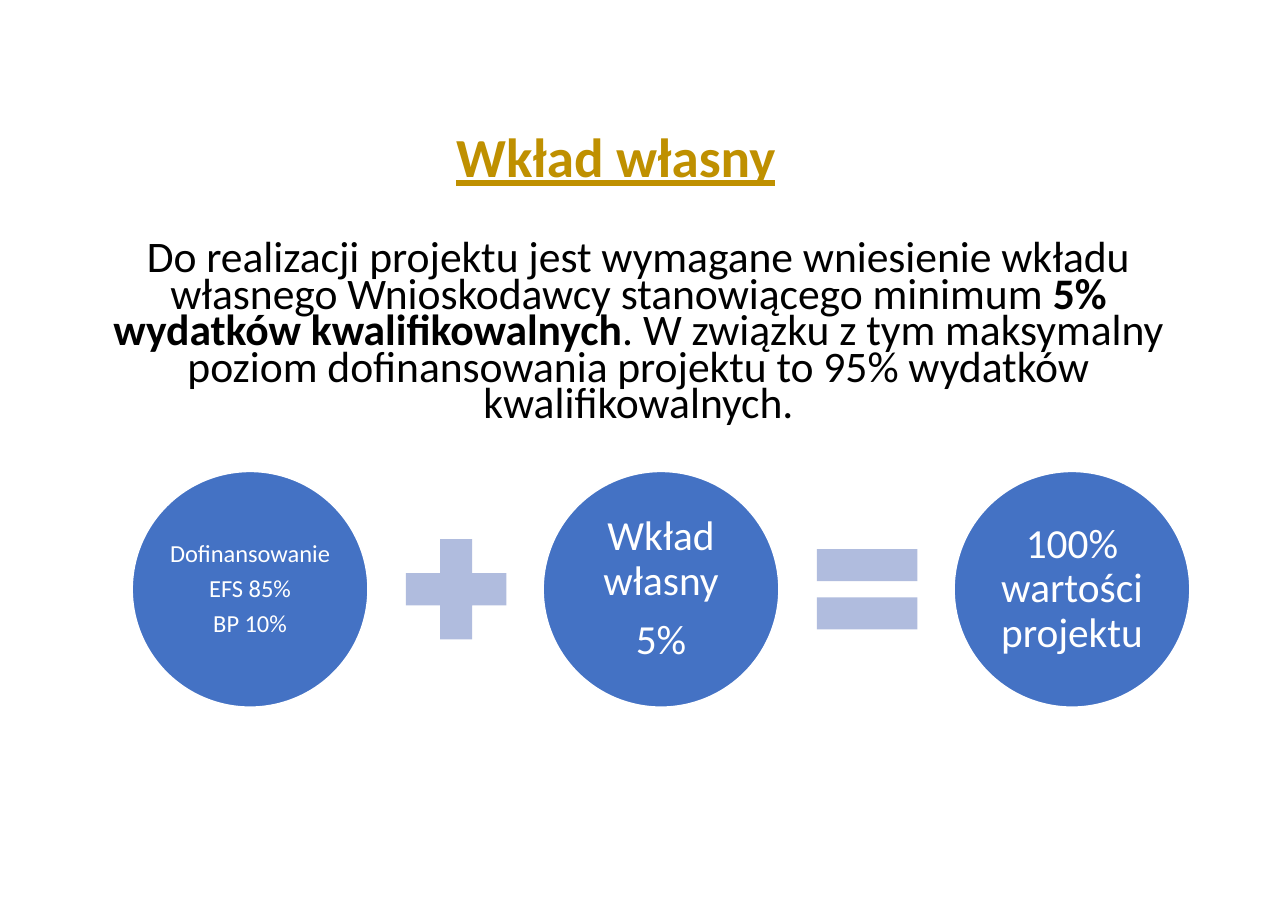
"""Build the slide on the applicant's own contribution to the project."""
from typing import NamedTuple

import pptx
import pptx.dml.color
import pptx.enum.shapes
import pptx.enum.text
import pptx.util

Inches = pptx.util.Inches
Pt = pptx.util.Pt
MSO_SHAPE = pptx.enum.shapes.MSO_SHAPE
PP_ALIGN = pptx.enum.text.PP_ALIGN
MSO_ANCHOR = pptx.enum.text.MSO_ANCHOR

CIRCLE_SIZE = 2.14
SIGN_SIZE = 1.24
FIRST_CIRCLE_LEFT = 1.2
CIRCLE_STEP = 3.73
SIGN_OFFSET = 2.32
ROW_MIDDLE = 5.35


class Share(NamedTuple):
    """One circle of the equation."""
    lines: tuple[str, ...]
    size: float
    inset: float


SHARES = (
    Share(("Dofinansowanie", "EFS 85%", "BP 10%"), 16, 0.02),
    Share(("Wkład własny", "5%"), 27, 0.04),
    Share(("100% wartości projektu",), 27, 0.04),
)
SIGNS = (MSO_SHAPE.MATH_PLUS, MSO_SHAPE.MATH_EQUAL)
REQUIREMENT = (
    ("Do realizacji projektu jest wymagane wniesienie wkładu własnego "
     "Wnioskodawcy stanowiącego minimum ", False),
    ("5% wydatków kwalifikowalnych", True),
    (". W związku z tym maksymalny poziom dofinansowania projektu to 95% "
     "wydatków kwalifikowalnych.", False),
)


def rgb(value: str) -> pptx.dml.color.RGBColor:
    """Turn a hex string into a colour."""
    return pptx.dml.color.RGBColor.from_string(value)


def apply(target, formats: dict) -> None:
    """Set each attribute of the target to its format value."""
    for name, value in formats.items():
        setattr(target, name, value)


def add_run(paragraph, text: str, size: float, color: str, **formats) -> None:
    """Append a formatted run to the paragraph."""
    run = paragraph.add_run()
    run.text = text
    apply(run.font, {"name": "Calibri", "size": Pt(size), **formats})
    run.font.color.rgb = rgb(color)


def add_figure(slide, kind, left: float, size: float, color: str):
    """Add a flat shape centred on the row of the equation."""
    figure = slide.shapes.add_shape(
        kind, Inches(left), Inches(ROW_MIDDLE - size / 2), Inches(size), Inches(size))
    figure.shadow.inherit = False
    figure.fill.solid()
    figure.fill.fore_color.rgb = rgb(color)
    figure.line.fill.background()
    return figure


def add_share(slide, share: Share, left: float) -> None:
    """Add a circle with its lines of text."""
    circle = add_figure(slide, MSO_SHAPE.OVAL, left, CIRCLE_SIZE, "4472C4")
    circle.line.color.rgb = rgb("FFFFFF")
    circle.line.width = Pt(1)
    frame = circle.text_frame
    inset = Inches(share.inset)
    apply(frame, {"word_wrap": True, "vertical_anchor": MSO_ANCHOR.MIDDLE,
                  "margin_left": inset, "margin_right": inset,
                  "margin_top": inset, "margin_bottom": inset})
    for index, line in enumerate(share.lines):
        paragraph = frame.add_paragraph() if index else frame.paragraphs[0]
        apply(paragraph, {"alignment": PP_ALIGN.CENTER, "line_spacing": 0.9,
                          "space_after": Pt(round(share.size * 0.35, 1))})
        add_run(paragraph, line, share.size, "FFFFFF")


def add_heading(slide) -> None:
    """Place and format the title placeholder."""
    heading = slide.shapes.title
    apply(heading, {"left": Inches(4.04), "top": Inches(1.06),
                    "width": Inches(4.09), "height": Inches(0.71)})
    apply(heading.text_frame, {"word_wrap": True, "vertical_anchor": MSO_ANCHOR.TOP,
                               "auto_size": pptx.enum.text.MSO_AUTO_SIZE.NONE})
    paragraph = heading.text_frame.paragraphs[0]
    paragraph.alignment = PP_ALIGN.LEFT
    add_run(paragraph, "Wkład własny", 36, "BF9000", bold=True, underline=True)


def add_requirement(slide) -> None:
    """Add the paragraph on the required contribution."""
    requirement = slide.shapes.add_textbox(
        Inches(0.65), Inches(2.16), Inches(10.29), Inches(1.9))
    requirement.text_frame.word_wrap = True
    paragraph = requirement.text_frame.paragraphs[0]
    apply(paragraph, {"alignment": PP_ALIGN.CENTER, "line_spacing": 0.7})
    for text, bold in REQUIREMENT:
        add_run(paragraph, text, 28.5, "000000", bold=bold)


def main() -> None:
    """Create and save the presentation."""
    presentation = pptx.Presentation()
    presentation.slide_width = Inches(11.69)
    presentation.slide_height = Inches(8.27)
    slide = presentation.slides.add_slide(presentation.slide_layouts[5])
    add_heading(slide)
    add_requirement(slide)
    for index, share in enumerate(SHARES):
        add_share(slide, share, FIRST_CIRCLE_LEFT + index * CIRCLE_STEP)
    for index, sign in enumerate(SIGNS):
        left = FIRST_CIRCLE_LEFT + SIGN_OFFSET + index * CIRCLE_STEP
        add_figure(slide, sign, left, SIGN_SIZE, "B0BCDE")
    presentation.save("out.pptx")


if __name__ == "__main__":
    main()
